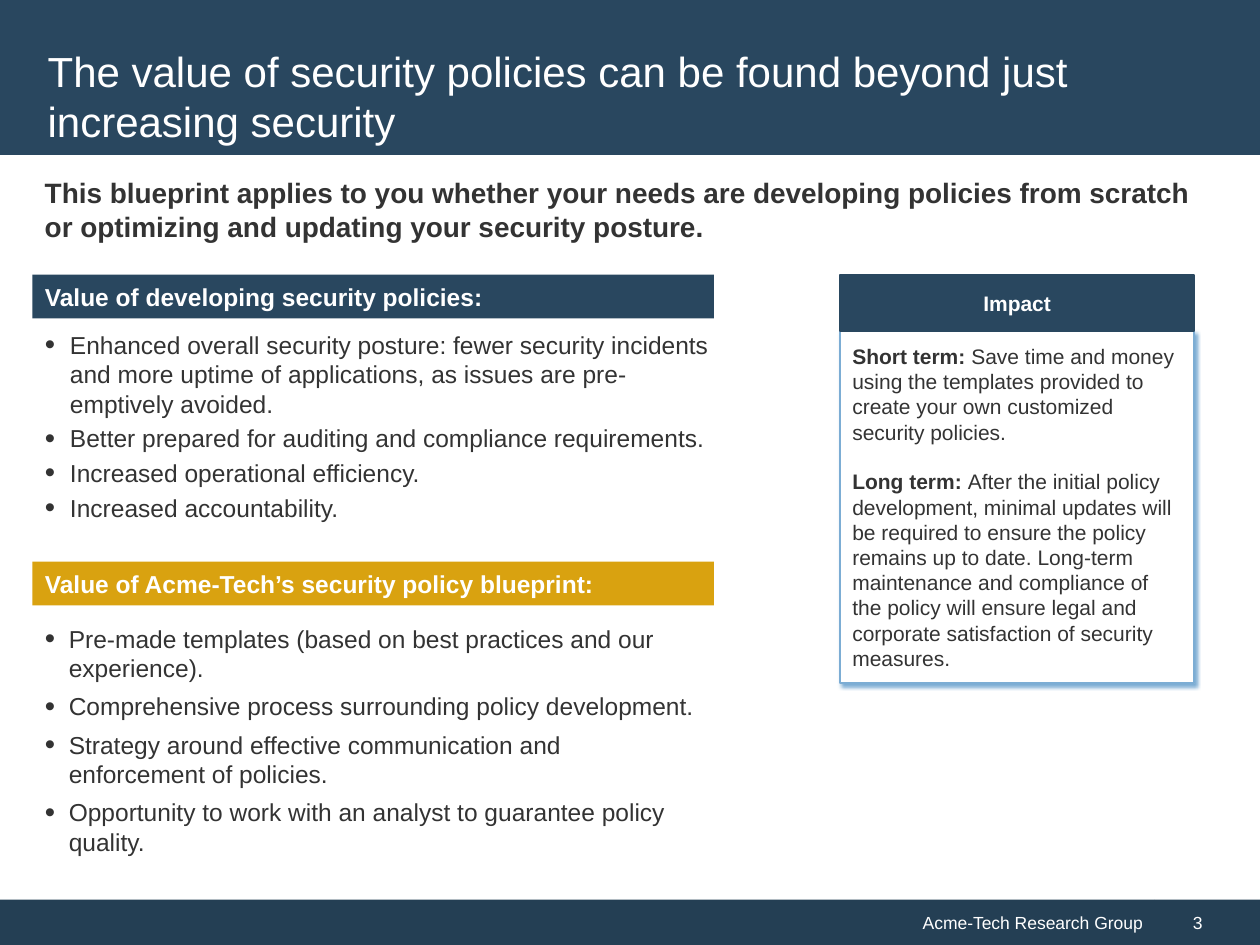
"""Build the slide on the value of security policies."""
from lxml import etree
from pptx import Presentation, util as u
from pptx.dml.color import RGBColor
from pptx.enum import shapes, text
from pptx.oxml import parse_xml
from pptx.oxml.ns import nsdecls, qn

Pt = u.Pt
NAVY, FOOTER, GOLD, BLUE, DARK, WHITE = "29475F", "243F54", "D9A210", "7CADD4", "333333", "FFFFFF"
LEFT, MIDDLE = text.PP_ALIGN.LEFT, text.MSO_ANCHOR.MIDDLE


def add_block(left, top, width, height, fill=None, line=None):
    """Add a filled rectangle, or a text box when there is no fill."""
    if fill is None:
        box = page.shapes.add_textbox(Pt(left), Pt(top), Pt(width), Pt(height))
    else:
        box = page.shapes.add_shape(
            shapes.MSO_SHAPE.RECTANGLE, Pt(left), Pt(top), Pt(width), Pt(height))
        box.shadow.inherit = False
        box.fill.solid()
        box.fill.fore_color.rgb = RGBColor.from_string(fill)
        if line:
            box.line.color.rgb = RGBColor.from_string(line)
            box.line.width = Pt(1)
        else:
            box.line.fill.background()
        box.text_frame.vertical_anchor = MIDDLE
    box.text_frame.word_wrap = True
    return box


def write(box, paragraphs, size, color, align=LEFT, before=0, indent=None):
    """Write paragraphs of (wording, bold) runs, bulleted when indented."""
    for index, runs in enumerate(paragraphs):
        frame = box.text_frame
        para = frame.add_paragraph() if index else frame.paragraphs[0]
        para.alignment = align
        para.space_before = Pt(before if index or indent else 0)
        if indent:
            props = para._p.get_or_add_pPr()
            props.set("marL", str(Pt(indent)))
            props.set("indent", str(-Pt(indent)))
            bullet_color = etree.SubElement(props, qn("a:buClr"))
            etree.SubElement(bullet_color, qn("a:srgbClr"), val=color)
            etree.SubElement(props, qn("a:buSzPct"), val="120000")
            etree.SubElement(props, qn("a:buFont"), typeface="Arial")
            etree.SubElement(props, qn("a:buChar"), char="•")
        for wording, bold in runs:
            span = para.add_run()
            span.text = wording
            span.font.name = "Arial"
            span.font.size = Pt(size)
            span.font.bold = bold
            span.font.color.rgb = RGBColor.from_string(color)


deck = Presentation()
deck.slide_width, deck.slide_height = Pt(720), Pt(540)
page = deck.slides.add_slide(deck.slide_layouts[5])

title = page.shapes.title
title.left, title.top, title.width, title.height = Pt(20), Pt(20), Pt(679), Pt(69)
title.text_frame.auto_size = text.MSO_AUTO_SIZE.NONE
title.text_frame.word_wrap = True
title.text_frame.vertical_anchor = MIDDLE
write(title, [[("The value of security policies can be found beyond just increasing security", False)]],
      24, WHITE)
band = add_block(0, 0, 720, 88.5, NAVY)
title.element.addprevious(band.element)

footer = add_block(0, 514, 660, 26, FOOTER)
write(footer, [[("Acme-Tech Research Group", False)]], 10, WHITE, text.PP_ALIGN.RIGHT)
number = add_block(660, 514, 60, 26, FOOTER)
number.text_frame.margin_left = Pt(21.6)
write(number, [[("3", False)]], 10, WHITE)

intro = add_block(18.5, 97, 679, 52)
write(intro, [[("This blueprint applies to you whether your needs are developing policies from "
                "scratch or optimizing and updating your security posture.", True)]], 16, DARK)

sections = [
    ("Value of developing security policies:", NAVY, 157, 185, 394.5, 3, 14.4, [
        "Enhanced overall security posture: fewer security incidents and more uptime of "
        "applications, as issues are pre-emptively avoided.",
        "Better prepared for auditing and compliance requirements.",
        "Increased operational efficiency.",
        "Increased accountability."]),
    ("Value of Acme-Tech’s security policy blueprint:", GOLD, 321, 353, 389.5, 5, 13.7, [
        "Pre-made templates (based on best practices and our experience).",
        "Comprehensive process surrounding policy development.",
        "Strategy around effective communication and enforcement of policies.",
        "Opportunity to work with an analyst to guarantee policy quality."]),
]
for heading, fill, top, list_top, list_width, before, indent, points in sections:
    header = add_block(18.5, top, 389.5, 25, fill)
    write(header, [[(heading, True)]], 14, WHITE)
    bullets = add_block(18.5, list_top, list_width, 122)
    write(bullets, [[(point, False)] for point in points], 14, DARK, before=before, indent=indent)

impact = add_block(480, 189, 202.5, 201.5, WHITE, BLUE)
impact.element.spPr.find(qn("a:effectLst")).append(parse_xml(
    f'<a:outerShdw {nsdecls("a")} blurRad="{Pt(2)}" dist="{Pt(2)}" dir="3600000" algn="tl">'
    f'<a:srgbClr val="{BLUE}"/></a:outerShdw>'))
write(impact, [
    [("Short term: ", True),
     ("Save time and money using the templates provided to create your own customized "
      "security policies.", False)],
    [("Long term: ", True),
     ("After the initial policy development, minimal updates will be required to ensure the "
      "policy remains up to date. Long-term maintenance and compliance of the policy will "
      "ensure legal and corporate satisfaction of security measures.", False)],
], 12, DARK, before=14)
impact_header = add_block(480, 157, 202.5, 32, NAVY, NAVY)
write(impact_header, [[("Impact", True)]], 12, WHITE, text.PP_ALIGN.CENTER)

deck.save("out.pptx")
